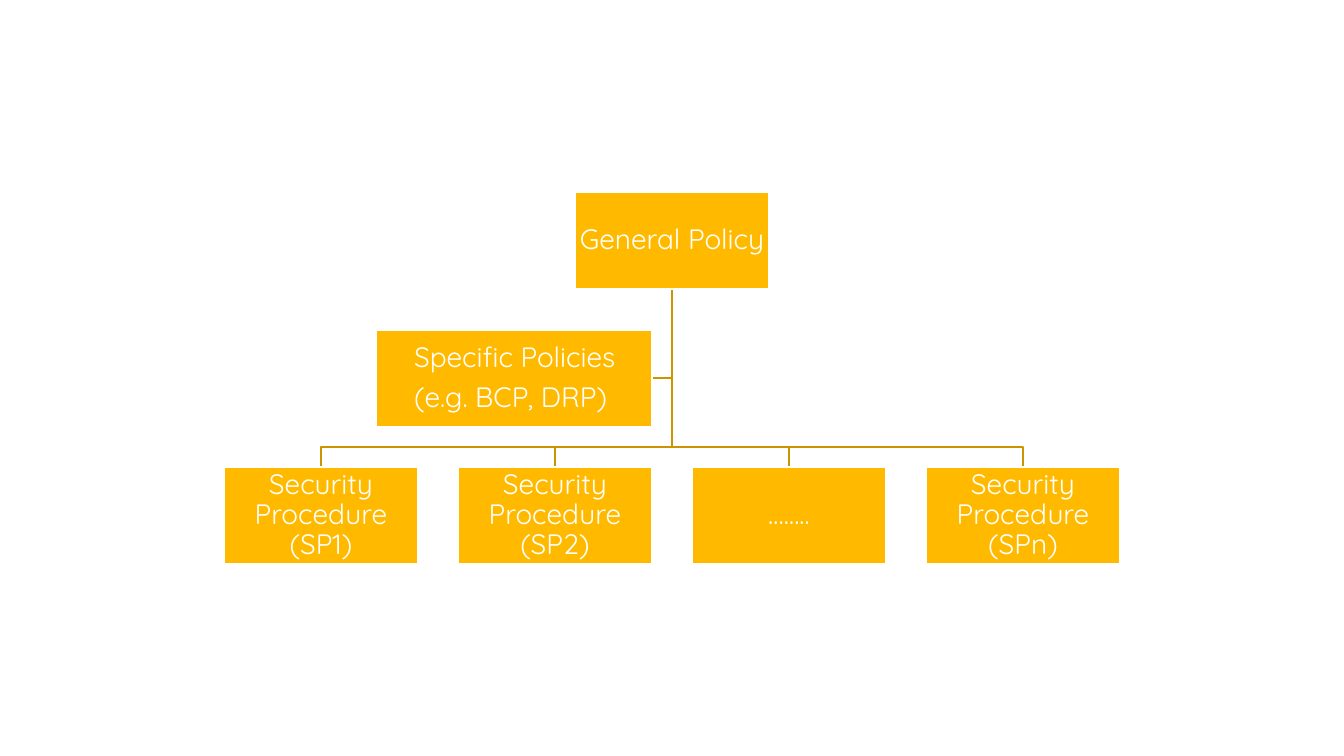
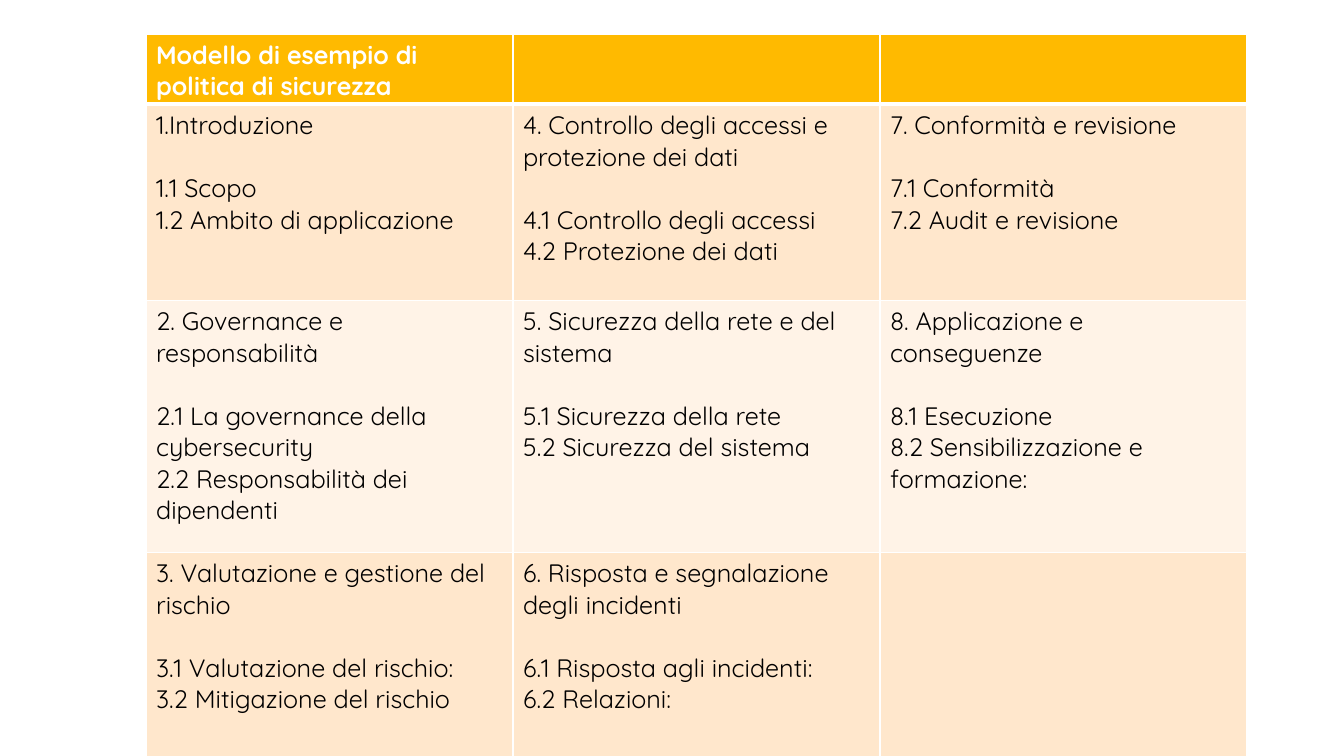
import lxml.etree
import pptx
import pptx.dml.color
import pptx.enum.shapes
import pptx.enum.text
import pptx.oxml.ns
import pptx.util

# Shared look
EMU_PER_PX = 914400 / 100.8
FONT = "Quicksand"
COLOURS = {
    "amber": "FFBA00",
    "line": "CC9500",
    "band_dark": "FFE7CC",
    "band_light": "FFF3E7",
    "white": "FFFFFF",
    "black": "000000",
}
COLOURS = {name: pptx.dml.color.RGBColor.from_string(code) for name, code in COLOURS.items()}
ALIGN = pptx.enum.text.PP_ALIGN
qn = pptx.oxml.ns.qn


def px(length):
    return pptx.util.Emu(round(length * EMU_PER_PX))


def write_text(frame, lines, colour, font_format, paragraph_formats):
    """Write one paragraph per line, each with its own format values."""
    for index, (line, paragraph_format) in enumerate(zip(lines, paragraph_formats)):
        paragraph = frame.paragraphs[0] if index == 0 else frame.add_paragraph()
        for name, value in paragraph_format.items():
            setattr(paragraph, name, value)
        run = paragraph.add_run()
        run.text = line
        run.font.color.rgb = COLOURS[colour]
        for name, value in font_format.items():
            setattr(run.font, name, value)


presentation = pptx.Presentation()
presentation.slide_width = px(1344)
presentation.slide_height = px(756)
blank_layout = presentation.slide_layouts[6]

# Slide 1: policy hierarchy
slide = presentation.slides.add_slide(blank_layout)

BOX_WIDTH, BOX_HEIGHT = 194, 97
TRUNK_X = 672
POLICY_TOP, SPECIFIC_TOP, PROCEDURE_TOP = 192, 330, 467
SPECIFIC_LEFT, SPECIFIC_WIDTH = 376, 276
BUS_Y = 447
procedures = ["Security Procedure (SP1)", "Security Procedure (SP2)", "……..", "Security Procedure (SPn)"]
procedure_centres = [321 + 234 * index for index in range(len(procedures))]

# Bent branches, each from the general policy to one box below
specific_middle = SPECIFIC_TOP + BOX_HEIGHT // 2
branches = [[(TRUNK_X, specific_middle), (SPECIFIC_LEFT + SPECIFIC_WIDTH, specific_middle)]]
branches += [
    [(TRUNK_X, BUS_Y), (centre, BUS_Y), (centre, PROCEDURE_TOP)]
    for centre in reversed(procedure_centres)
]
for points in branches:
    builder = slide.shapes.build_freeform(TRUNK_X, POLICY_TOP + BOX_HEIGHT, scale=EMU_PER_PX)
    builder.add_line_segments(points, close=False)
    branch = builder.convert_to_shape()
    branch.shadow.inherit = False
    branch.fill.background()
    branch.line.color.rgb = COLOURS["line"]
    branch.line.width = pptx.util.Pt(1.25)

# Boxes: left, top, width, left inset, alignment, lines of text
boxes = [
    (TRUNK_X - BOX_WIDTH // 2, POLICY_TOP, BOX_WIDTH, 1, ALIGN.CENTER, ["General Policy"]),
    (SPECIFIC_LEFT, SPECIFIC_TOP, SPECIFIC_WIDTH, 38, ALIGN.LEFT,
     ["Specific Policies", "(e.g. BCP, DRP)"]),
]
boxes += [
    (centre - BOX_WIDTH // 2, PROCEDURE_TOP, BOX_WIDTH, 1, ALIGN.CENTER, [procedure])
    for centre, procedure in zip(procedure_centres, procedures)
]
for left, top, width, inset, alignment, texts in boxes:
    shape = slide.shapes.add_shape(
        pptx.enum.shapes.MSO_SHAPE.RECTANGLE, px(left), px(top), px(width), px(BOX_HEIGHT)
    )
    shape.shadow.inherit = False
    shape.fill.solid()
    shape.fill.fore_color.rgb = COLOURS["amber"]
    shape.line.color.rgb = COLOURS["white"]
    shape.line.width = pptx.util.Pt(1.25)
    frame_format = {
        "word_wrap": True,
        "vertical_anchor": pptx.enum.text.MSO_ANCHOR.MIDDLE,
        "margin_left": px(inset),
        "margin_right": px(1),
        "margin_top": px(1),
        "margin_bottom": px(1),
    }
    for name, value in frame_format.items():
        setattr(shape.text_frame, name, value)
    paragraph_format = {"alignment": alignment, "line_spacing": 0.9, "space_after": pptx.util.Pt(7)}
    write_text(shape.text_frame, texts, "white", {"name": FONT, "size": pptx.util.Pt(20)},
               [paragraph_format] * len(texts))

# Slide 2: security policy template
slide = presentation.slides.add_slide(blank_layout)

COLUMN_WIDTH = 367
ROW_HEIGHTS = [70, 196, 252, 204]
rows = [
    [["Modello di esempio di politica di sicurezza"], [], []],
    [
        ["1.Introduzione", "1.1 Scopo", "1.2 Ambito di applicazione"],
        ["4. Controllo degli accessi e protezione dei dati",
         "4.1 Controllo degli accessi", "4.2 Protezione dei dati"],
        ["7. Conformità e revisione", "7.1 Conformità", "7.2 Audit e revisione"],
    ],
    [
        ["2. Governance e responsabilità",
         "2.1 La governance della cybersecurity", "2.2 Responsabilità dei dipendenti"],
        ["5. Sicurezza della rete e del sistema",
         "5.1 Sicurezza della rete", "5.2 Sicurezza del sistema"],
        ["8. Applicazione e conseguenze",
         "8.1 Esecuzione", "8.2 Sensibilizzazione e formazione:"],
    ],
    [
        ["3. Valutazione e gestione del rischio",
         "3.1 Valutazione del rischio:", "3.2 Mitigazione del rischio"],
        ["6. Risposta e segnalazione degli incidenti",
         "6.1 Risposta agli incidenti:", "6.2 Relazioni:"],
        [],
    ],
]
row_fills = ["amber", "band_dark", "band_light", "band_dark"]

table = slide.shapes.add_table(
    len(rows), len(rows[0]), px(146), px(34), px(COLUMN_WIDTH * 3), px(sum(ROW_HEIGHTS))
).table
for column in table.columns:
    column.width = px(COLUMN_WIDTH)

for row_index, row in enumerate(rows):
    table.rows[row_index].height = px(ROW_HEIGHTS[row_index])
    is_header = row_index == 0
    for column_index, texts in enumerate(row):
        cell = table.cell(row_index, column_index)
        cell.margin_bottom = px(2 if is_header else 5)

        # White borders, thicker under the header
        widths = {"lnL": 1, "lnR": 1, "lnT": 3 if row_index == 1 else 1, "lnB": 3 if is_header else 1}
        cell_properties = cell._tc.get_or_add_tcPr()
        for tag, width in widths.items():
            border = lxml.etree.SubElement(cell_properties, qn("a:" + tag), w=str(pptx.util.Pt(width)))
            border_fill = lxml.etree.SubElement(border, qn("a:solidFill"))
            lxml.etree.SubElement(border_fill, qn("a:srgbClr"), val=str(COLOURS["white"]))

        cell.fill.solid()
        cell.fill.fore_color.rgb = COLOURS[row_fills[row_index]]

        # The section heading stands one line above its entries
        heading_gap = pptx.util.Pt(0 if is_header else 22.5)
        paragraph_formats = [{"space_after": heading_gap}] + [{}] * len(texts[1:])
        write_text(cell.text_frame, texts, "white" if is_header else "black",
                   {"name": FONT, "size": pptx.util.Pt(18), "bold": is_header}, paragraph_formats)

presentation.save("out.pptx")
